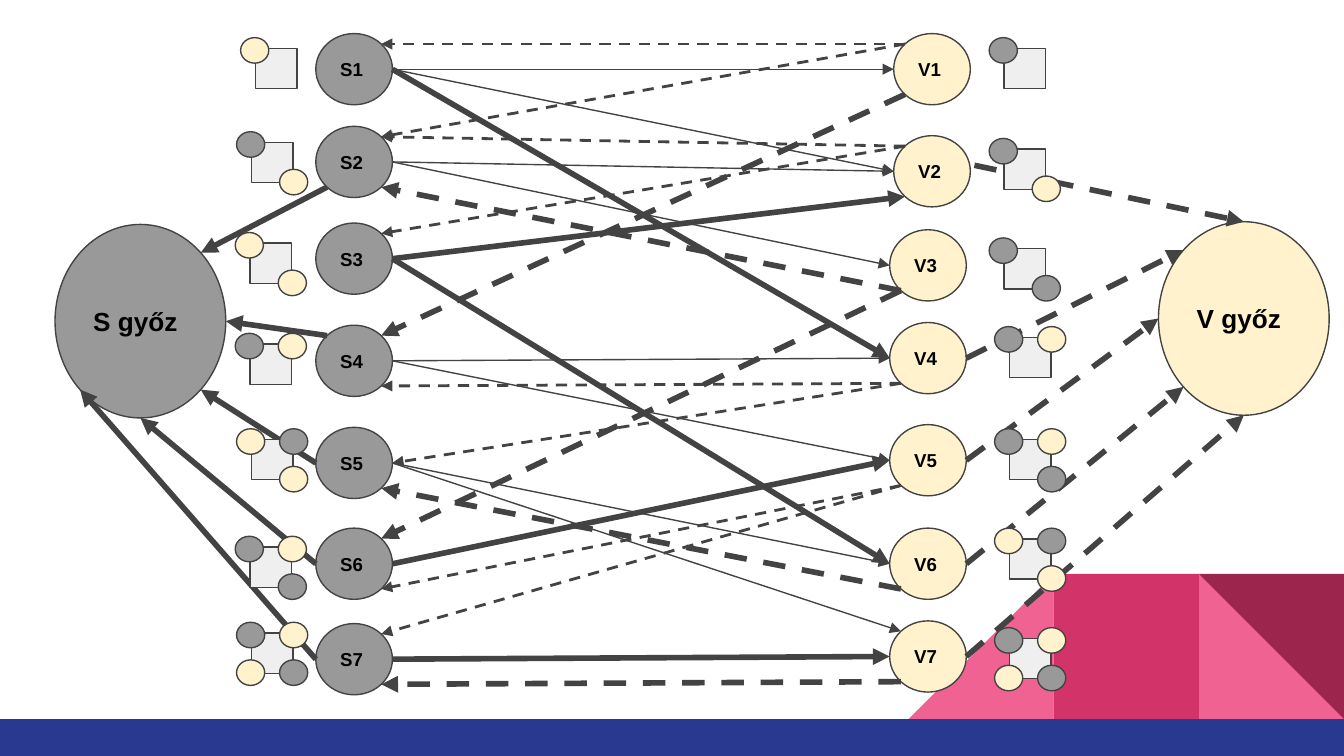
"""Build a slide with the state graph of a two-player board game."""
import math

from lxml import etree
from pptx import Presentation
from pptx import util as u
from pptx.dml.color import RGBColor
from pptx.enum import dml, shapes, text
from pptx.oxml.ns import qn

GREY, CREAM, PALE, DARK = "999999", "FFF2CC", "EFEFEF", "434343"
PINK, ROSE, WINE, NAVY = "F06292", "D23369", "9C254D", "2A3990"
NODE_SIZE, WIN_SIZE = (0.57, 0.53), (1.27, 1.44)

S_TOPS = [0.25, 0.94, 1.66, 2.42, 3.18, 3.93, 4.64]
V_PLACES = [(6.65, 0.25), (6.65, 1.01), (6.62, 1.71), (6.62, 2.4),
            (6.62, 3.16), (6.62, 3.93), (6.62, 4.62)]

SITE_ANGLES = {"E": 0, "SE": 45, "S": 90, "SW": 135,
               "W": 180, "NW": 225, "N": 270, "NE": 315}

# Each move reads: source, source side, target, target side.
S_MOVES = ["S1 E V1 W", "S1 E V2 W", "S2 E V2 W", "S2 E V3 W", "S4 E V4 W",
           "S4 E V5 W", "S5 E V6 W", "S5 E V7 NW"]
S_BEST_MOVES = ["S1 E V4 W", "S2 SW S NE", "S3 E V2 SW", "S3 E V6 W", "S4 NW S E",
                "S5 W S SE", "S6 E V5 W", "S6 W S S", "S7 E V7 W", "S7 W S SW"]
V_MOVES = ["V1 NW S1 NE", "V1 NW S2 NE", "V2 NW S2 NE", "V2 NW S3 NE",
           "V4 SW S4 SE", "V4 SW S5 E", "V5 SW S7 NE", "V5 SW S6 SE"]
V_BEST_MOVES = ["V1 SW S4 NE", "V3 SW S6 NE", "V3 SW S2 SE", "V4 E V NW", "V5 E V W",
                "V6 E V SW", "V7 E V S", "V7 SW S7 SE", "V6 SW S5 SE"]

CORNERS = [(-0.11, -0.08), (0.21, -0.08), (-0.11, 0.2), (0.21, 0.2)]
# Tokens per corner: top left, top right, bottom left, bottom right.
BOARDS = [
    (1.9, 0.36, "c---"), (1.87, 1.06, "g--c"), (1.86, 1.81, "c--c"),
    (1.86, 2.56, "gc--"), (1.87, 3.27, "cg-c"), (1.86, 4.07, "gc-g"),
    (1.87, 4.71, "gccg"),
    (7.47, 0.36, "g---"), (7.47, 1.11, "g--c"), (7.47, 1.85, "g--g"),
    (7.51, 2.51, "gc--"), (7.51, 3.27, "gc-g"), (7.51, 4.01, "cg-c"),
    (7.51, 4.75, "gccg"),
]


def color(value):
    """Turn a hex string into a colour."""
    return RGBColor.from_string(value)


def add_figure(page, kind, place, size, fill, outline=True):
    """Add a filled preset shape, outlined if asked."""
    figure = page.shapes.add_shape(kind, *map(u.Inches, place + size))
    figure.shadow.inherit = False
    figure.fill.solid()
    figure.fill.fore_color.rgb = color(fill)
    if outline:
        figure.line.color.rgb = color(DARK)
        figure.line.width = u.Pt(0.75)
    else:
        figure.line.fill.background()
    return figure


def add_node(page, label, place, size, fill, points):
    """Add a labelled ellipse and return its place and size."""
    node = add_figure(page, shapes.MSO_SHAPE.OVAL, place, size, fill)
    frame = node.text_frame
    frame.margin_left = frame.margin_right = u.Inches(0.1)
    frame.margin_top = frame.margin_bottom = u.Inches(0.1)
    frame.vertical_anchor = text.MSO_ANCHOR.MIDDLE
    frame.text = label
    paragraph = frame.paragraphs[0]
    paragraph.alignment = text.PP_ALIGN.LEFT
    font = paragraph.runs[0].font
    font.name, font.size, font.bold = "Arial", u.Pt(points), True
    font.color.rgb = color("000000")
    return place, size


def site(node, side):
    """Find the point on a side of an ellipse."""
    (left, top), (width, height) = node
    angle = math.radians(SITE_ANGLES[side])
    return (left + width / 2 * (1 + math.cos(angle)),
            top + height / 2 * (1 + math.sin(angle)))


def add_arrow(page, start, end, points, dashed):
    """Add a straight arrow between two points."""
    arrow = page.shapes.add_connector(
        shapes.MSO_CONNECTOR.STRAIGHT, *map(u.Inches, start + end))
    arrow.line.color.rgb = color(DARK)
    arrow.line.width = u.Pt(points)
    if dashed:
        arrow.line.dash_style = dml.MSO_LINE.DASH
    etree.SubElement(arrow.line._get_or_add_ln(), qn("a:tailEnd"), type="triangle")
    etree.SubElement(arrow._element.spPr, qn("a:effectLst"))


def add_moves(page, nodes, moves, points, dashed):
    """Add one arrow for each move."""
    for move in moves:
        source, source_side, target, target_side = move.split()
        add_arrow(page, site(nodes[source], source_side),
                  site(nodes[target], target_side), points, dashed)


def add_board(page, left, top, tokens):
    """Add a square with tokens on its corners."""
    add_figure(page, shapes.MSO_SHAPE.RECTANGLE, (left, top), (0.31, 0.3), PALE)
    fills = {"g": GREY, "c": CREAM}
    for token, (across, down) in zip(tokens, CORNERS):
        if token in fills:
            add_figure(page, shapes.MSO_SHAPE.OVAL, (left + across, top + down),
                       (0.21, 0.19), fills[token])


def add_decor(page):
    """Add the bottom band and the corner tiles."""
    triangle, rectangle = shapes.MSO_SHAPE.RIGHT_TRIANGLE, shapes.MSO_SHAPE.RECTANGLE
    side = 1.08
    tiles = [(triangle, 2, PINK, 0), (triangle, 0, PINK, 270),
             (rectangle, 1, ROSE, 0), (triangle, 2, WINE, 180)]
    for kind, column, fill, rotation in tiles:
        tile = add_figure(page, kind, (6.76 + column * side, 4.27), (side, side),
                          fill, outline=False)
        tile.rotation = rotation
    add_figure(page, rectangle, (0, 5.35), (10, 0.28), NAVY, outline=False)


def add_nodes(page):
    """Add all position and win nodes, keyed by name."""
    nodes = {
        "S": add_node(page, "S győz", (0.41, 1.67), WIN_SIZE, GREY, 14),
        "V": add_node(page, "V győz", (8.62, 1.65), WIN_SIZE, CREAM, 14),
    }
    s_places = [(2.35, top) for top in S_TOPS]
    for letter, places, fill in (("S", s_places, GREY), ("V", V_PLACES, CREAM)):
        for number, place in enumerate(places, 1):
            name = f"{letter}{number}"
            nodes[name] = add_node(page, name, place, NODE_SIZE, fill, 10)
    return nodes


def main():
    """Build and save the deck."""
    deck = Presentation()
    deck.slide_width = u.Inches(10)
    deck.slide_height = deck.slide_width * 9 // 16
    page = deck.slides.add_slide(deck.slide_layouts[6])
    add_decor(page)
    nodes = add_nodes(page)
    add_moves(page, nodes, S_MOVES, 0.75, False)
    add_moves(page, nodes, S_BEST_MOVES, 3, False)
    add_moves(page, nodes, V_MOVES, 1.5, True)
    add_moves(page, nodes, V_BEST_MOVES, 3, True)
    add_arrow(page, (7.25, 1.23), site(nodes["V"], "N"), 3, True)
    for board in BOARDS:
        add_board(page, *board)
    deck.save("out.pptx")


if __name__ == "__main__":
    main()
